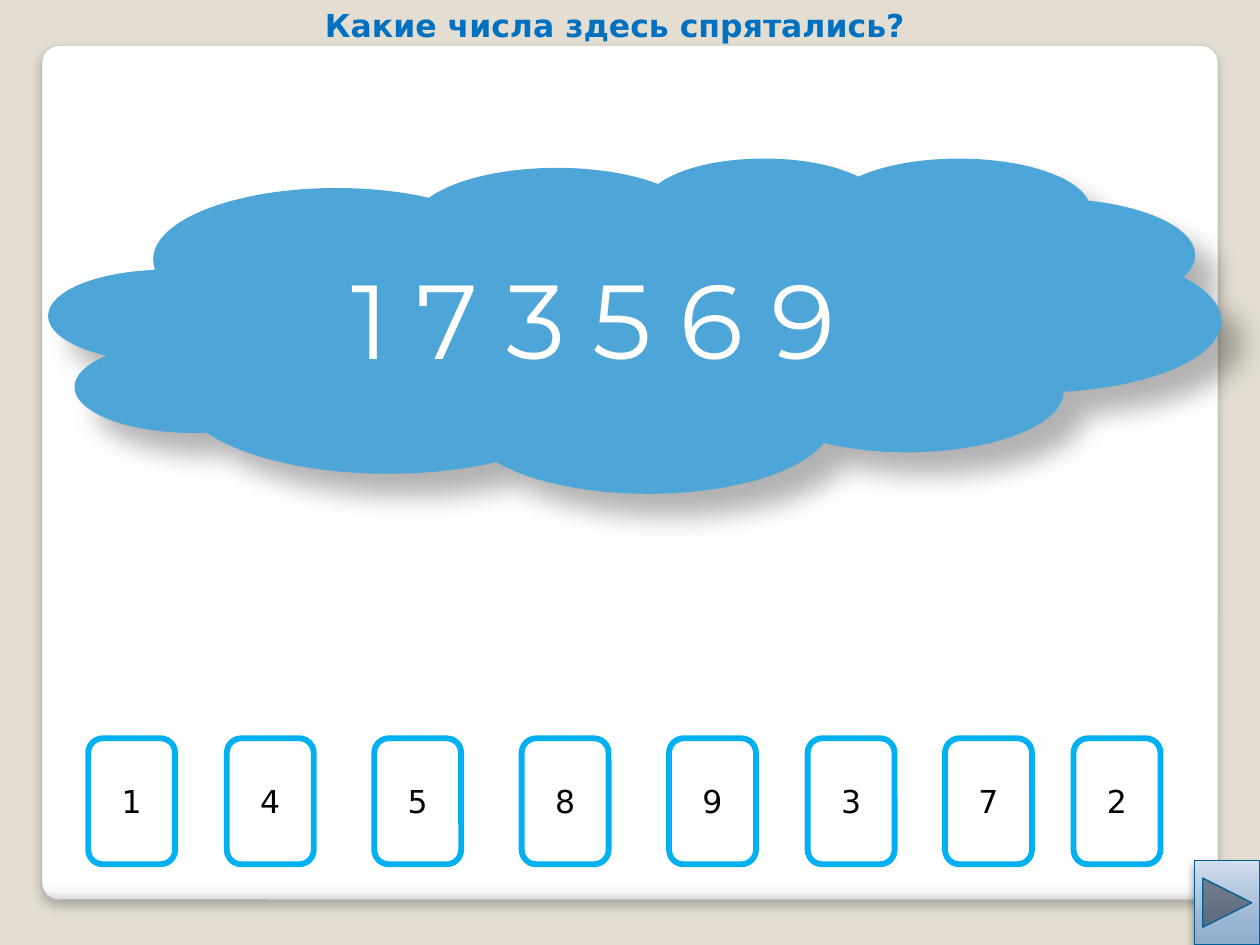
from lxml import etree
from pptx import Presentation
from pptx.dml.color import RGBColor
from pptx.enum.shapes import MSO_SHAPE
from pptx.enum.text import MSO_ANCHOR, MSO_AUTO_SIZE, PP_ALIGN
from pptx.oxml.ns import qn
from pptx.util import Inches, Pt

WIDTH, HEIGHT = 10, 7.5
ROUNDED = MSO_SHAPE.ROUNDED_RECTANGLE
CLOUD = MSO_SHAPE.CLOUD
NEXT_BUTTON = MSO_SHAPE.ACTION_BUTTON_FORWARD_OR_NEXT
MIDDLE = MSO_ANCHOR.MIDDLE
CENTER = PP_ALIGN.CENTER
NO_AUTOFIT = MSO_AUTO_SIZE.NONE

PANEL_STOPS = [(0, "FFFFFF"), (98, "FFFFFF"), (99, "F7F7F7"), (100, "DADADA")]
BUTTON_STOPS = [(0, "90ABCB"), (25, "99B3D2"), (100, "D1DEEE")]
TITLE_FONT = {"name": "DejaVu Sans", "size": Pt(18), "bold": True}
CLOUD_FONT = {"name": "Montserrat", "size": Pt(60)}
CARD_FONT = {"name": "DejaVu Sans", "size": Pt(18)}

# Each card's digit and its distance from the left edge of the row
CARDS = [("1", 0), ("4", 1.1), ("5", 2.27), ("8", 3.44),
         ("9", 4.61), ("3", 5.71), ("7", 6.8), ("2", 7.82)]
CARD_WIDTH = 0.69


def color(value):
    return RGBColor.from_string(value)


def add_color_node(parent, value):
    return etree.SubElement(parent, qn("a:srgbClr"), val=value)


def set_gradient(shape, stops, angle):
    """Fill with (percent, colour) stops; the angle runs clockwise."""
    shape.fill.gradient()
    shape.fill.gradient_angle = 360 - angle
    stop_list = shape.fill._xPr.find(qn("a:gradFill")).find(qn("a:gsLst"))
    for stop in list(stop_list):
        stop_list.remove(stop)
    for percent, value in stops:
        stop = etree.SubElement(stop_list, qn("a:gs"), pos=str(percent * 1000))
        add_color_node(stop, value)


def set_shadow(shape, opacity, blur, distance, angle):
    effects = shape._element.spPr.find(qn("a:effectLst"))
    shadow = etree.SubElement(
        effects, qn("a:outerShdw"), blurRad=str(Pt(blur)), dist=str(Pt(distance)),
        dir=str(angle * 60000), algn="ctr", rotWithShape="0")
    etree.SubElement(add_color_node(shadow, "000000"), qn("a:alpha"),
                     val=str(opacity * 1000))


def add_shape(page, kind, box, fill=None, line=None):
    shape = page.shapes.add_shape(kind, *map(Inches, box))
    shape.shadow.inherit = False
    if fill:
        shape.fill.solid()
        shape.fill.fore_color.rgb = color(fill)
    if line:
        line_color, width = line
        shape.line.color.rgb = color(line_color)
        shape.line.width = Pt(width)
    else:
        shape.line.fill.background()
    return shape


def write(shape, text, font, text_color, wrap=True):
    frame = shape.text_frame
    settings = {"word_wrap": wrap, "vertical_anchor": MIDDLE, "auto_size": NO_AUTOFIT}
    for name, value in settings.items():
        setattr(frame, name, value)
    para = frame.paragraphs[0]
    para.alignment = CENTER
    span = para.add_run()
    span.text = text
    for name, value in font.items():
        setattr(span.font, name, value)
    span.font.color.rgb = color(text_color)


def add_panel(page, box):
    panel = add_shape(page, ROUNDED, box, line=("A4A4A4", 0.16))
    panel.adjustments[0] = 0.02
    set_gradient(panel, PANEL_STOPS, 90)
    set_shadow(panel, 25, 6, 4, 90)


def add_title(page, box, text):
    title = page.shapes.add_textbox(*map(Inches, box))
    write(title, text, TITLE_FONT, "0070C0", wrap=False)


def add_cloud(page, box, text):
    cloud = add_shape(page, CLOUD, box, fill="4EA5D8")
    set_shadow(cloud, 30, 15, 18, 45)
    write(cloud, text, CLOUD_FONT, "FFFFFF")


def add_cards(page, box):
    left, top, _, height = box
    for digit, offset in CARDS:
        card = add_shape(page, ROUNDED, (left + offset, top, CARD_WIDTH, height),
                         fill="FFFFFF", line=("00B0F0", 3.35))
        write(card, digit, CARD_FONT, "000000")


def add_next_button(page, box):
    button = add_shape(page, NEXT_BUTTON, box, line=("035E94", 0.75))
    set_gradient(button, BUTTON_STOPS, 270)
    set_shadow(button, 40, 5.2, 3, 90)


def main():
    deck = Presentation()
    deck.slide_width, deck.slide_height = Inches(WIDTH), Inches(HEIGHT)
    page = deck.slides.add_slide(deck.slide_layouts[6])
    page.background.fill.solid()
    page.background.fill.fore_color.rgb = color("E3DED1")

    margin = WIDTH / 30
    add_panel(page, (margin, 0.36, WIDTH - 2 * margin, 6.78))
    add_title(page, (2.47, 0, 4.82, 0.4), "Какие числа здесь спрятались?")
    add_cloud(page, (0.39, 1.25, 9.3, 2.66), "1 7 3 5 6 9")
    add_cards(page, (0.7, 5.86, 8.51, 1))
    add_next_button(page, (WIDTH - 0.52, HEIGHT - 0.67, 0.52, 0.67))
    deck.save("out.pptx")


if __name__ == "__main__":
    main()
